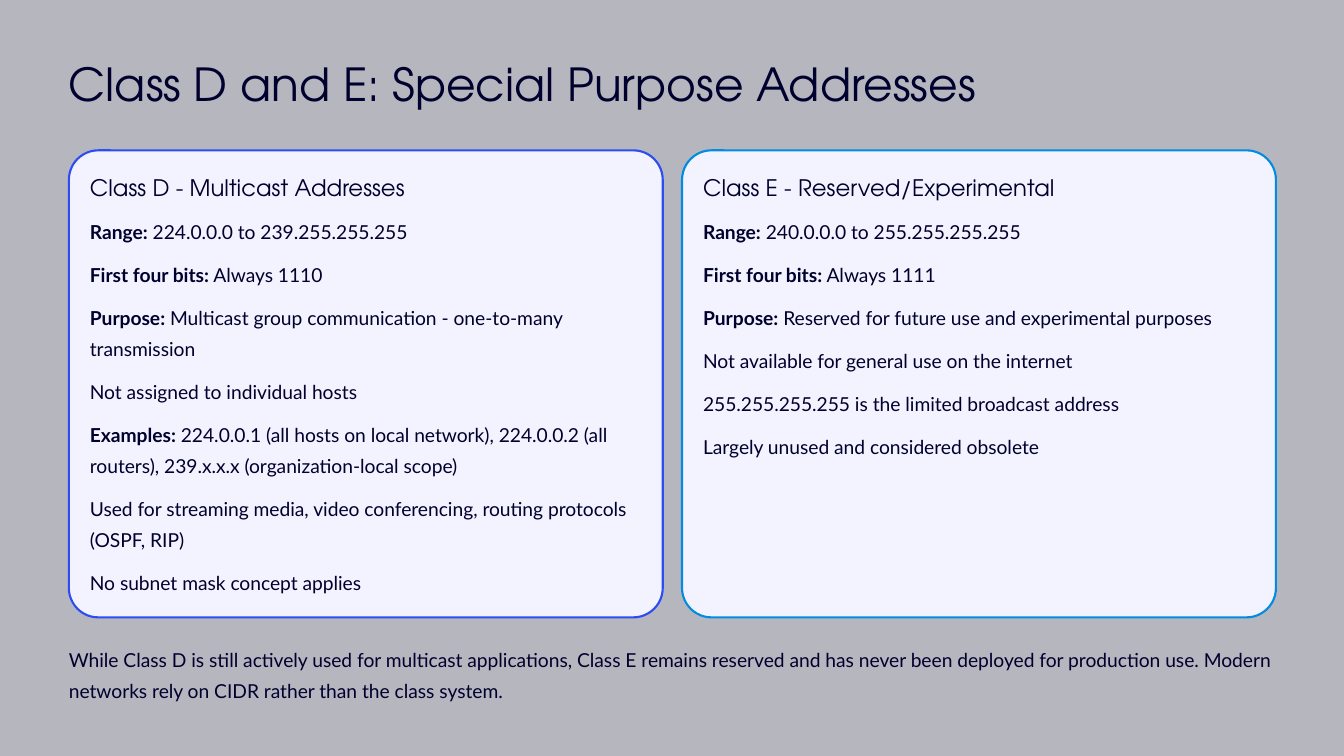
from lxml.etree import SubElement
from pptx import Presentation
from pptx.dml.color import RGBColor
from pptx.enum.shapes import MSO_SHAPE as Shape
from pptx.enum.text import MSO_ANCHOR as Anchor, MSO_AUTO_SIZE as AutoSize, PP_ALIGN as Align
from pptx.oxml.ns import qn
from pptx.util import Inches, Pt

BACKDROP = RGBColor(0xB6, 0xB6, 0xBF)
CARD_FILL = RGBColor(0xF3, 0xF3, 0xFF)
INK = RGBColor(0x00, 0x00, 0x2E)
BLUE = RGBColor(0x2D, 0x4D, 0xF2)
SKY = RGBColor(0x01, 0x8C, 0xE1)

LEFT, CARD_TOP, CARD_WIDTH, CARD_HEIGHT = 0.82, 1.79, 7.07, 5.56
CARD_PITCH, PADDING, TEXT_WIDTH = 7.3, 0.25, 6.55

CARDS = [
    (BLUE, "Class D - Multicast Addresses", [
        ("Range:", " 224.0.0.0 to 239.255.255.255"),
        ("First four bits:", " Always 1110"),
        ("Purpose:", " Multicast group communication - one-to-many transmission"),
        ("", "Not assigned to individual hosts"),
        ("Examples:", " 224.0.0.1 (all hosts on local network), 224.0.0.2 (all routers), "
                      "239.x.x.x (organization-local scope)"),
        ("", "Used for streaming media, video conferencing, routing protocols (OSPF, RIP)"),
        ("", "No subnet mask concept applies"),
    ]),
    (SKY, "Class E - Reserved/Experimental", [
        ("Range:", " 240.0.0.0 to 255.255.255.255"),
        ("First four bits:", " Always 1111"),
        ("Purpose:", " Reserved for future use and experimental purposes"),
        ("", "Not available for general use on the internet"),
        ("", "255.255.255.255 is the limited broadcast address"),
        ("", "Largely unused and considered obsolete"),
    ]),
]
CLOSING = ("While Class D is still actively used for multicast applications, Class E remains "
           "reserved and has never been deployed for production use. Modern networks rely on "
           "CIDR rather than the class system.")


class AddressSlide:
    heading_font = "TeX Gyre Adventor"
    body_font = "Lato"

    def __init__(self, presentation):
        self.slide = presentation.slides.add_slide(presentation.slide_layouts[4])
        self.shapes = self.slide.shapes
        fill = self.slide.background.fill
        fill.solid()
        fill.fore_color.rgb = BACKDROP

    def fill_text(self, shape, box, items, font_name, size, line_height):
        shape.left, shape.top, shape.width, shape.height = map(Inches, box)
        frame = shape.text_frame
        frame.word_wrap = True
        frame.auto_size = AutoSize.NONE
        frame.vertical_anchor = Anchor.TOP
        frame.margin_left = frame.margin_right = frame.margin_top = frame.margin_bottom = 0
        for index, (label, text) in enumerate(items):
            paragraph = frame.add_paragraph() if index else frame.paragraphs[0]
            properties = paragraph._p.get_or_add_pPr()
            properties.set("marL", "0")
            properties.set("indent", "0")
            SubElement(properties, qn("a:buNone"))
            paragraph.alignment = Align.LEFT
            paragraph.line_spacing = Pt(line_height)
            paragraph.space_before = Pt(10.4 if index else 0)
            paragraph.space_after = Pt(0)
            font = paragraph.font
            font.name, font.size, font.bold = font_name, Pt(size), False
            font.color.rgb = INK
            if label:
                run = paragraph.add_run()
                run.text = label
                run.font.bold = True
            paragraph.add_run().text = text

    def title(self, text):
        self.fill_text(self.shapes.title, (LEFT, 0.64, 14.37, 0.69), [("", text)],
                       self.heading_font, 39, 49)

    def card(self, column, color, heading, items):
        left = LEFT + column * CARD_PITCH
        card = self.shapes.add_shape(Shape.ROUNDED_RECTANGLE, Inches(left), Inches(CARD_TOP),
                                     Inches(CARD_WIDTH), Inches(CARD_HEIGHT))
        card.shadow.inherit = False
        card.adjustments[0] = 0.063
        card.fill.solid()
        card.fill.fore_color.rgb = CARD_FILL
        card.line.color.rgb = color
        card.line.width = Pt(1.8)
        self.shapes._spTree.insert(2, card._element)
        holders = {holder.placeholder_format.idx: holder for holder in self.slide.placeholders}
        text_left = left + PADDING
        self.fill_text(holders[1 + 2 * column], (text_left, 2.05, TEXT_WIDTH, 0.34),
                       [("", heading)], self.heading_font, 19.5, 24.5)
        self.fill_text(holders[2 + 2 * column], (text_left, 2.53, TEXT_WIDTH, 4.57),
                       items, self.body_font, 16.5, 26.5)

    def closing(self, text):
        box = (LEFT, 7.62, 14.37, 0.75)
        self.fill_text(self.shapes.add_textbox(*map(Inches, box)), box, [("", text)],
                       self.body_font, 16.5, 26.5)


def main():
    presentation = Presentation()
    presentation.slide_width, presentation.slide_height = Inches(16), Inches(9)
    page = AddressSlide(presentation)
    page.title("Class D and E: Special Purpose Addresses")
    for column, (color, heading, items) in enumerate(CARDS):
        page.card(column, color, heading, items)
    page.closing(CLOSING)
    presentation.save("out.pptx")


if __name__ == "__main__":
    main()
